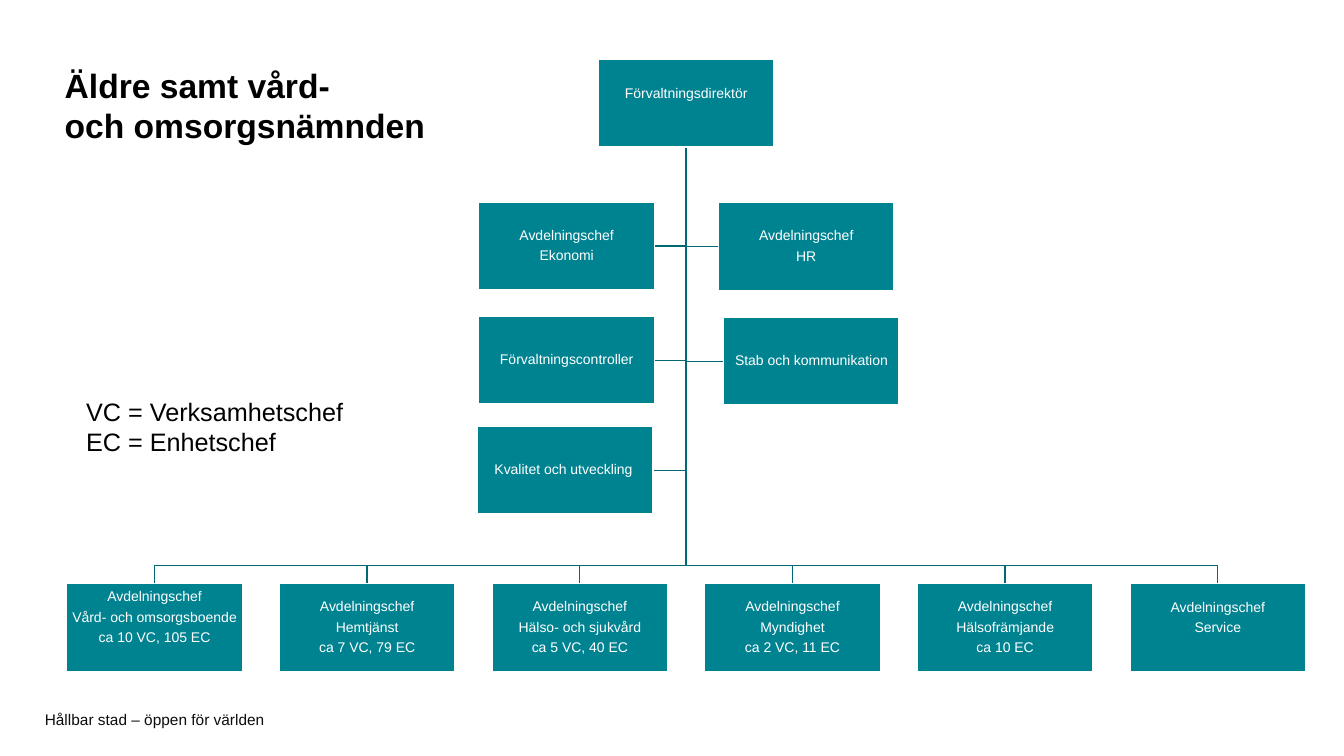
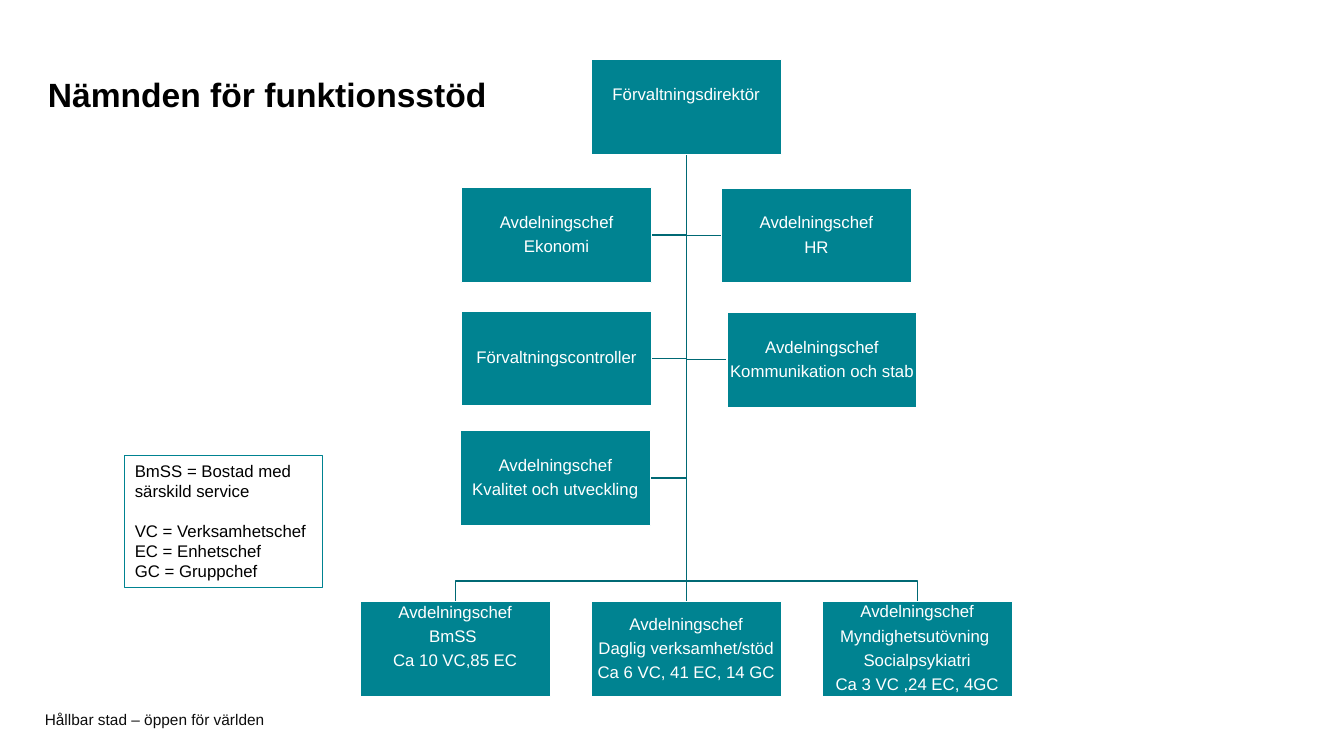
from lxml import etree
from pptx import Presentation
from pptx.dml.color import RGBColor
from pptx.enum import shapes, text
from pptx.oxml.ns import qn
from pptx.util import Pt

COLOURS = {
    "card": "008391",
    "line": "006974",
    "white": "FFFFFF",
    "text": "000000",
    "footer": "0D0D0D",
}
TOP, BOTTOM = 0, 2
PADDING = (7.2, 3.6, 7.2, 3.6)
TITLE_ONLY = 5


def colour(name):
    return RGBColor.from_string(COLOURS[name])


def set_all(target, values):
    for name, value in values.items():
        setattr(target, name, value)


def place(shape, box):
    sides = ("left", "top", "width", "height")
    set_all(shape, {side: Pt(length) for side, length in zip(sides, box)})


def write(shape, lines, size, ink="text", padding=PADDING,
          anchor=text.MSO_ANCHOR.TOP, bold=False, **layout):
    """Fill a shape with one paragraph per line; layout holds paragraph settings."""
    frame = shape.text_frame
    left, top, right, bottom = map(Pt, padding)
    set_all(frame, {
        "word_wrap": True, "auto_size": text.MSO_AUTO_SIZE.NONE,
        "vertical_anchor": anchor, "margin_left": left, "margin_top": top,
        "margin_right": right, "margin_bottom": bottom,
    })
    frame.text = "\n".join(lines)
    for para in frame.paragraphs:
        set_all(para, {"alignment": text.PP_ALIGN.LEFT, **layout})
        set_all(para.font, {"name": "Arial", "size": Pt(size), "bold": bold})
        para.font.color.rgb = colour(ink)
    return frame.paragraphs


def add_title(page, box, lines):
    title = page.shapes.title
    place(title, box)
    write(title, lines, 24, bold=True)


def add_layout_footer(page, box):
    """Write the footer and move it to the layout, where all pages share it."""
    footer = page.shapes.add_textbox(*map(Pt, box))
    write(footer, ["Hållbar stad – öppen för världen"], 11, "footer",
          padding=(0, 0, 0, 0), anchor=text.MSO_ANCHOR.MIDDLE)
    layout_tree = page.slide_layout.placeholders[0].element.getparent()
    layout_tree.append(footer.element)


def add_rectangle(page, box, fill, outline, weight):
    shape = page.shapes.add_shape(shapes.MSO_SHAPE.RECTANGLE, *map(Pt, box))
    shape.shadow.inherit = False
    if fill:
        shape.fill.solid()
        shape.fill.fore_color.rgb = colour(fill)
    else:
        shape.fill.background()
    shape.line.color.rgb = colour(outline)
    shape.line.width = Pt(weight)
    return shape


def add_card(page, box, lines, size, raised=False):
    """Draw a unit; a raised one keeps the height of one line free below its text."""
    card = add_rectangle(page, box, "card", "white", 1)
    bottom = 1 + 1.4 * size if raised else 1
    write(card, lines, size, "white", padding=(1, 1, 1, bottom),
          anchor=text.MSO_ANCHOR.MIDDLE, alignment=text.PP_ALIGN.CENTER,
          line_spacing=0.9, space_after=Pt(0.37 * size))
    return card


def send_line_back(line):
    """Colour a line and put it behind the cards."""
    line.line.color.rgb = colour("line")
    line.line.width = Pt(1)
    line.element.getparent().insert(2, line.element)


def add_bent_line(page, start, *corners):
    builder = page.shapes.build_freeform(*map(Pt, start))
    builder.add_line_segments([tuple(map(Pt, corner)) for corner in corners],
                              close=False)
    line = builder.convert_to_shape()
    line.shadow.inherit = False
    line.fill.background()
    send_line_back(line)


def add_straight_line(page, upper, lower):
    line = page.shapes.add_connector(shapes.MSO_CONNECTOR.STRAIGHT, 0, 0, 0, 0)
    line.begin_connect(upper, BOTTOM)
    line.end_connect(lower, TOP)
    etree.SubElement(line.element.spPr, qn("a:effectLst"))
    send_line_back(line)


def add_org_chart(page, box, card_size, size, drop, staff, departments):
    """Director on top, staff beside the trunk, departments along the bottom.

    staff: (gap to the trunk, negative on its left; offset from the top; lines)
    departments: (lines, raised)
    """
    left, top, width, height = box
    card_width, card_height = card_size
    centre = left + width / 2
    row_top = top + height - card_height
    bus = row_top - drop
    start = (centre, top + card_height)

    director_box = (centre - card_width / 2, top, card_width, card_height)
    director = add_card(page, director_box, ["Förvaltningsdirektör"], size, True)

    step = (width - card_width) / (len(departments) - 1)
    for index, (lines, raised) in enumerate(departments):
        card_left = left + index * step
        card = add_card(page, (card_left, row_top, card_width, card_height),
                        lines, size, raised)
        middle = card_left + card_width / 2
        if abs(middle - centre) < 0.01:
            add_straight_line(page, director, card)
        else:
            add_bent_line(page, start, (centre, bus), (middle, bus),
                          (middle, row_top))

    for gap, offset, lines in staff:
        card_left = centre + gap - (card_width if gap < 0 else 0)
        card_top = top + offset
        add_card(page, (card_left, card_top, card_width, card_height), lines, size)
        level = card_top + card_height / 2
        add_bent_line(page, start, (centre, level), (centre + gap, level))


def build_elderly_care(page):
    chief = "Avdelningschef"
    add_title(page, (39, 42.5, 381, 65.5), ["Äldre samt vård-", "och omsorgsnämnden"])
    add_org_chart(
        page, (47.6, 42.5, 885, 437.1), (125.5, 62.7), 10, 13,
        staff=[
            (-22.6, 102, [chief, "Ekonomi"]),
            (23, 102.3, [chief, "HR"]),
            (-22.6, 183.5, ["Förvaltningscontroller"]),
            (26.7, 184.2, ["Stab och kommunikation"]),
            (-23.5, 262.1, ["Kvalitet och utveckling "]),
        ],
        departments=[
            ([chief, "Vård- och omsorgsboende", "ca 10 VC, 105 EC"], True),
            ([chief, "Hemtjänst", "ca 7 VC, 79 EC"], False),
            ([chief, "Hälso- och sjukvård", "ca 5 VC, 40 EC"], False),
            ([chief, "Myndighet", "ca 2 VC, 11 EC"], False),
            ([chief, "Hälsofrämjande", "ca 10 EC"], False),
            ([chief, "Service"], True),
        ])
    legend = page.shapes.add_textbox(*map(Pt, (54.5, 279.5, 244, 51)))
    write(legend, ["VC = Verksamhetschef", "EC = Enhetschef"], 18)


def build_disability_support(page):
    chief = "Avdelningschef"
    add_title(page, (27, 49.5, 348, 36), ["Nämnden för funktionsstöd"])
    add_org_chart(
        page, (257.2, 42.5, 466, 455), (136, 68), 12, 14.5,
        staff=[
            (-24.6, 91.5, [chief, "Ekonomi"]),
            (25, 91.8, [chief, "HR"]),
            (-24.6, 179.5, ["Förvaltningscontroller"]),
            (29, 180.5, [chief, "Kommunikation och stab"]),
            (-25.5, 265, [chief, "Kvalitet och utveckling"]),
        ],
        departments=[
            ([chief, "BmSS ", "Ca 10 VC,85 EC"], True),
            ([chief, "Daglig verksamhet/stöd", "Ca 6 VC, 41 EC, 14 GC"], False),
            ([chief, "Myndighetsutövning ", "Socialpsykiatri",
              "Ca 3 VC ,24 EC, 4GC"], False),
        ])
    legend = add_rectangle(page, (89.2, 325.5, 141.3, 94), None, "card", 0.75)
    paras = write(legend, ["BmSS = Bostad med särskild service",
                           "VC = Verksamhetschef", "EC = Enhetschef",
                           "GC = Gruppchef"], 12)
    paras[1].space_before = Pt(14)


def main():
    deck = Presentation()
    deck.slide_width, deck.slide_height = Pt(960), Pt(540)
    layout = deck.slide_layouts[TITLE_ONLY]
    pages = [deck.slides.add_slide(layout) for _ in range(2)]
    add_layout_footer(pages[0], (32, 508, 680, 11.5))
    build_elderly_care(pages[0])
    build_disability_support(pages[1])
    deck.save("out.pptx")


if __name__ == "__main__":
    main()
